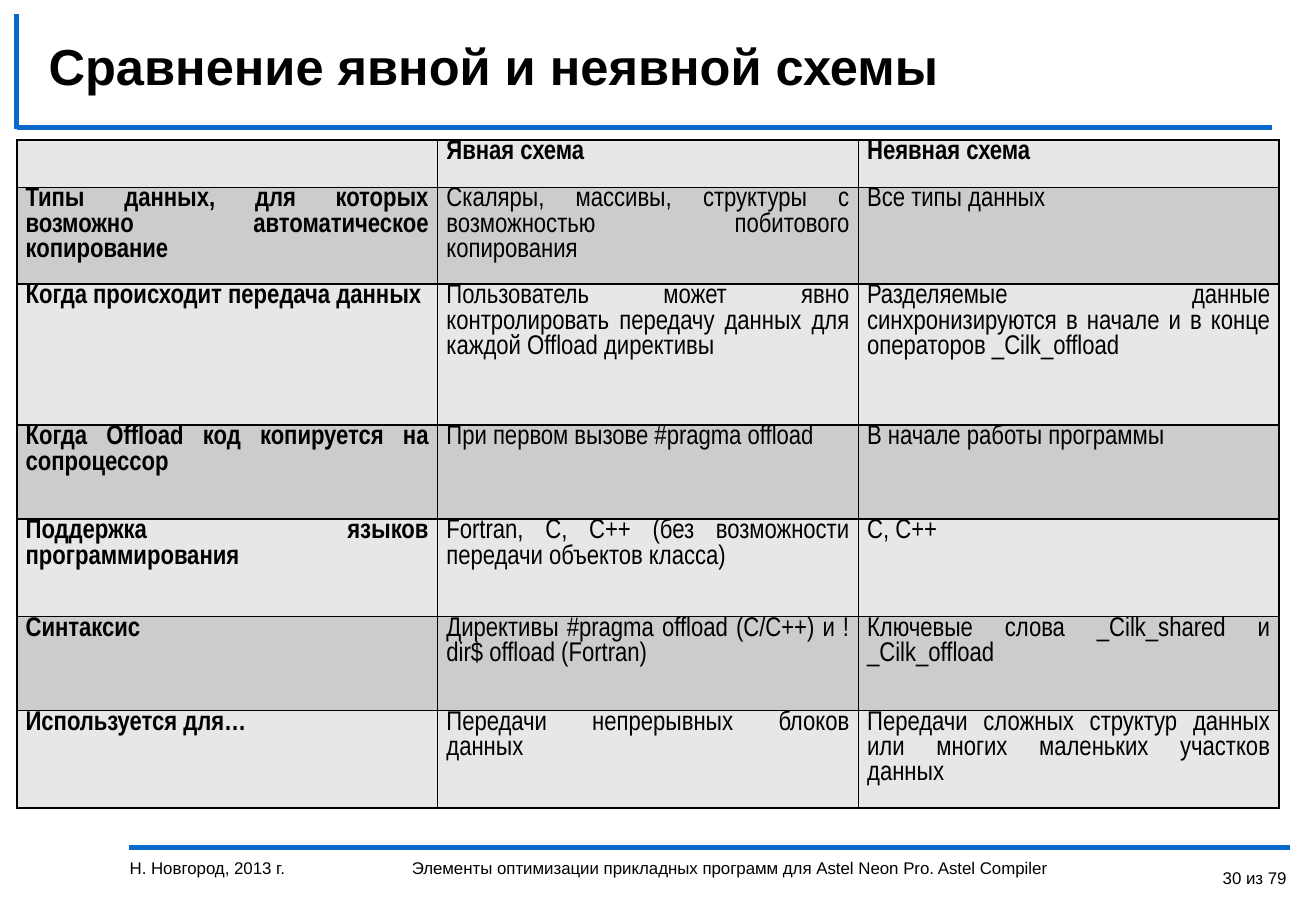
from lxml.etree import SubElement
from pptx import Presentation
from pptx.dml.color import RGBColor
from pptx.enum.shapes import MSO_CONNECTOR
from pptx.enum.text import MSO_ANCHOR, PP_ALIGN
from pptx.oxml.ns import qn
from pptx.util import Pt

COLORS = {"text": "000000", "rule": "0969CD", "border": "000000",
          "light": "E7E7E7", "dark": "CCCCCC"}

RULES = [(76.3, 502.6, 764.6, 502.6),
         (10, 75.8, 753.8, 75.8),
         (10, 8.6, 10, 76.3)]

COLUMN_WIDTH = 249.4
ROW_HEIGHTS = [28, 57.5, 83.5, 55.75, 57.75, 55.75, 57.75]
ROWS = [
    ("", "Явная схема", "Неявная схема"),
    ("Типы данных, для которых возможно автоматическое копирование",
     "Скаляры, массивы, структуры с возможностью побитового копирования",
     "Все типы данных"),
    ("Когда происходит передача данных",
     "Пользователь может явно контролировать передачу данных для каждой Offload директивы",
     "Разделяемые данные синхронизируются в начале и в конце операторов _Cilk_offload"),
    ("Когда Offload код копируется на сопроцессор",
     "При первом вызове #pragma offload",
     "В начале работы программы"),
    ("Поддержка языков программирования",
     "Fortran, C, C++ (без возможности передачи объектов класса)",
     "C, C++"),
    ("Синтаксис",
     "Директивы #pragma offload (С/C++) и !dir$ offload (Fortran)",
     "Ключевые слова _Cilk_shared и _Cilk_offload"),
    ("Используется для…",
     "Передачи непрерывных блоков данных",
     "Передачи сложных структур данных или многих маленьких участков данных"),
]


def color(name):
    return RGBColor.from_string(COLORS[name])


def add_run(p, text, size, font="Arial", bold=False):
    r = p.add_run()
    r.text = text
    r.font.size = Pt(size)
    r.font.name = font
    r.font.bold = bold
    r.font.color.rgb = color("text")


def add_rule(s, x1, y1, x2, y2):
    line = s.shapes.add_connector(MSO_CONNECTOR.STRAIGHT, Pt(x1), Pt(y1), Pt(x2), Pt(y2))
    line.line.color.rgb = color("rule")
    line.line.width = Pt(3)
    SubElement(line._element.spPr, qn("a:effectLst"))


def set_title(s, text):
    sp = s.shapes.title
    sp.left, sp.top, sp.width, sp.height = Pt(21.6), Pt(16.6), Pt(715), Pt(44)
    tf = sp.text_frame
    tf.vertical_anchor = MSO_ANCHOR.MIDDLE
    p = tf.paragraphs[0]
    p.alignment = PP_ALIGN.LEFT
    add_run(p, text, 30, bold=True)


def add_footer(s, text, left, width, align=PP_ALIGN.LEFT, spacing=None):
    tf = s.shapes.add_textbox(Pt(left), Pt(504.7), Pt(width), Pt(35)).text_frame
    tf.word_wrap = True
    p = tf.paragraphs[0]
    p.alignment = align
    p.line_spacing = spacing
    add_run(p, text, 10)


def set_borders(cell):
    tc_pr = cell._tc.get_or_add_tcPr()
    for side in ("lnL", "lnR", "lnT", "lnB"):
        ln = SubElement(tc_pr, qn(f"a:{side}"), w=str(Pt(1)))
        fill = SubElement(ln, qn("a:solidFill"))
        SubElement(fill, qn("a:srgbClr"), val=COLORS["border"])


def fill_cell(cell, text, bold, fill):
    cell.margin_left = cell.margin_right = Pt(5.2)
    cell.margin_top = cell.margin_bottom = 0
    set_borders(cell)
    cell.fill.solid()
    cell.fill.fore_color.rgb = color(fill)
    if text:
        p = cell.text_frame.paragraphs[0]
        p.alignment = PP_ALIGN.JUSTIFY
        p.space_after = Pt(6)
        add_run(p, text, 16, "Arial Narrow", bold)


def add_comparison(s):
    columns = len(ROWS[0])
    table = s.shapes.add_table(len(ROWS), columns, Pt(10), Pt(83), Pt(COLUMN_WIDTH * columns),
                               Pt(sum(ROW_HEIGHTS))).table
    for column in table.columns:
        column.width = Pt(COLUMN_WIDTH)
    for i, (height, texts) in enumerate(zip(ROW_HEIGHTS, ROWS)):
        table.rows[i].height = Pt(height)
        for j, text in enumerate(texts):
            fill_cell(table.cell(i, j), text, i == 0 or j == 0, "dark" if i % 2 else "light")


def main():
    prs = Presentation()
    prs.slide_width, prs.slide_height = Pt(780), Pt(540)
    s = prs.slides.add_slide(prs.slide_layouts[5])

    # Frame lines and title
    for rule in RULES:
        add_rule(s, *rule)
    set_title(s, "Сравнение явной и неявной схемы")

    # Comparison table
    add_comparison(s)

    # Footer
    add_footer(s, "Н. Новгород, 2013 г.", 69.8, 161)
    add_footer(s, "Элементы оптимизации прикладных программ для Astel Neon Pro. Astel Compiler",
               237, 453.6)
    add_footer(s, "30 из 79", 696.2, 73.4, PP_ALIGN.RIGHT, 1.5)

    prs.save("out.pptx")


if __name__ == "__main__":
    main()
